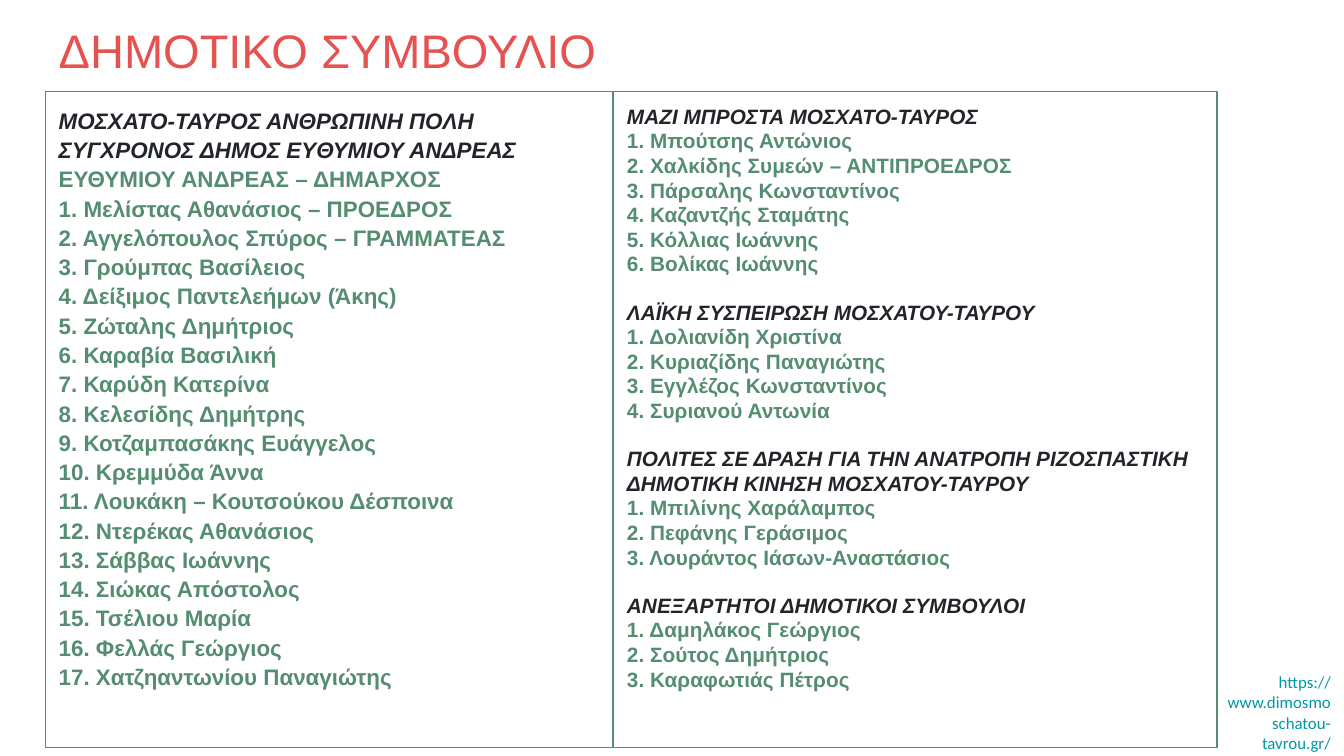
import pptx
import pptx.util
import pptx.dml.color
import pptx.enum.text

Cm = pptx.util.Cm
Pt = pptx.util.Pt
RGBColor = pptx.dml.color.RGBColor
ALIGN = pptx.enum.text.PP_ALIGN
ANCHOR = pptx.enum.text.MSO_ANCHOR

RED = RGBColor(0xE6, 0x52, 0x4F)
GREEN = RGBColor(0x54, 0x8D, 0x6F)
DARK = RGBColor(0x21, 0x25, 0x29)
TEAL = RGBColor(0x00, 0x97, 0xA7)

MAYOR = "ΕΥΘΥΜΙΟΥ ΑΝΔΡΕΑΣ – ΔΗΜΑΡΧΟΣ"
RULING = [
    ("ΜΟΣΧΑΤΟ-ΤΑΥΡΟΣ ΑΝΘΡΩΠΙΝΗ ΠΟΛΗ ΣΥΓΧΡΟΝΟΣ ΔΗΜΟΣ ΕΥΘΥΜΙΟΥ ΑΝΔΡΕΑΣ", MAYOR, [
        "Μελίστας Αθανάσιος – ΠΡΟΕΔΡΟΣ",
        "Αγγελόπουλος Σπύρος – ΓΡΑΜΜΑΤΕΑΣ",
        "Γρούμπας Βασίλειος",
        "Δείξιμος Παντελεήμων (Άκης)",
        "Ζώταλης Δημήτριος",
        "Καραβία Βασιλική",
        "Καρύδη Κατερίνα",
        "Κελεσίδης Δημήτρης",
        "Κοτζαμπασάκης Ευάγγελος",
        "Κρεμμύδα Άννα",
        "Λουκάκη – Κουτσούκου Δέσποινα",
        "Ντερέκας Αθανάσιος",
        "Σάββας Ιωάννης",
        "Σιώκας Απόστολος",
        "Τσέλιου Μαρία",
        "Φελλάς Γεώργιος",
        "Χατζηαντωνίου Παναγιώτης",
    ]),
]
OTHERS = [
    ("ΜΑΖΙ ΜΠΡΟΣΤΑ ΜΟΣΧΑΤΟ-ΤΑΥΡΟΣ", None, [
        "Μπούτσης Αντώνιος",
        "Χαλκίδης Συμεών – ΑΝΤΙΠΡΟΕΔΡΟΣ",
        "Πάρσαλης Κωνσταντίνος",
        "Καζαντζής Σταμάτης",
        "Κόλλιας Ιωάννης",
        "Βολίκας Ιωάννης",
    ]),
    ("ΛΑΪΚΗ ΣΥΣΠΕΙΡΩΣΗ ΜΟΣΧΑΤΟΥ-ΤΑΥΡΟΥ", None, [
        "Δολιανίδη Χριστίνα",
        "Κυριαζίδης Παναγιώτης",
        "Εγγλέζος Κωνσταντίνος",
        "Συριανού Αντωνία",
    ]),
    ("ΠΟΛΙΤΕΣ ΣΕ ΔΡΑΣΗ ΓΙΑ ΤΗΝ ΑΝΑΤΡΟΠΗ ΡΙΖΟΣΠΑΣΤΙΚΗ ΔΗΜΟΤΙΚΗ ΚΙΝΗΣΗ ΜΟΣΧΑΤΟΥ-ΤΑΥΡΟΥ", None, [
        "Μπιλίνης Χαράλαμπος",
        "Πεφάνης Γεράσιμος",
        "Λουράντος Ιάσων-Αναστάσιος",
    ]),
    ("ΑΝΕΞΑΡΤΗΤΟΙ ΔΗΜΟΤΙΚΟΙ ΣΥΜΒΟΥΛΟΙ", None, [
        "Δαμηλάκος Γεώργιος",
        "Σούτος Δημήτριος",
        "Καραφωτιάς Πέτρος",
    ]),
]


def add_box(slide, left, top, width, height, anchor=ANCHOR.TOP):
    """Add an empty wrapping text box, placed in centimetres."""
    box = slide.shapes.add_textbox(Cm(left), Cm(top), Cm(width), Cm(height))
    frame = box.text_frame
    frame.word_wrap = True
    frame.vertical_anchor = anchor
    frame.margin_left = frame.margin_right = Cm(0.25)
    frame.margin_top = frame.margin_bottom = Cm(0.25)
    return box


def add_text(box, text, size, color, font="Arial", bold=False, italic=False,
             align=ALIGN.LEFT, pitch=1.0, before=0):
    """Write one paragraph, using the box's first one while it is empty."""
    frame = box.text_frame
    para = frame.paragraphs[0] if not frame.text else frame.add_paragraph()
    para.alignment = align
    para.line_spacing = pitch
    if before:
        para.space_before = Pt(before)
    run = para.add_run()
    run.text = text
    run.font.name = font
    run.font.size = Pt(size)
    run.font.bold = bold
    run.font.italic = italic
    run.font.color.rgb = color


def add_panel(slide, left, width, groups, size, pitch):
    """Add a framed column of party headings and numbered members."""
    box = add_box(slide, left, 1.73, width, 12.4)
    box.line.color.rgb = GREEN
    box.line.width = Pt(0.75)
    style = dict(size=size, pitch=pitch, bold=True)
    for rank, (party, leader, members) in enumerate(groups):
        add_text(box, party, color=DARK, italic=True,
                 before=12.6 if rank else 0, **style)
        if leader:
            add_text(box, leader, color=GREEN, **style)
        for number, member in enumerate(members, 1):
            add_text(box, f"{number}. {member}", color=GREEN, **style)


def main():
    """Build the council slide and save it."""
    deck = pptx.Presentation()
    deck.slide_width, deck.slide_height = Cm(25.4), Cm(14.29)
    slide = deck.slides.add_slide(deck.slide_layouts[6])
    title = add_box(slide, 0.86, 0.13, 23.67, 1.6, ANCHOR.BOTTOM)
    add_text(title, "ΔΗΜΟΤΙΚΟ ΣΥΜΒΟΥΛΙΟ", 25.2, RED)
    add_panel(slide, 0.86, 10.72, RULING, 12, 1.09)
    add_panel(slide, 11.6, 11.4, OTHERS, 11.1, 0.99)
    link = add_box(slide, 22.83, 12.45, 2.57, 1.68)
    add_text(link, "https://www.dimosmoschatou-tavrou.gr/", 9, TEAL,
             font="Calibri", align=ALIGN.RIGHT)
    deck.save("out.pptx")


if __name__ == "__main__":
    main()
